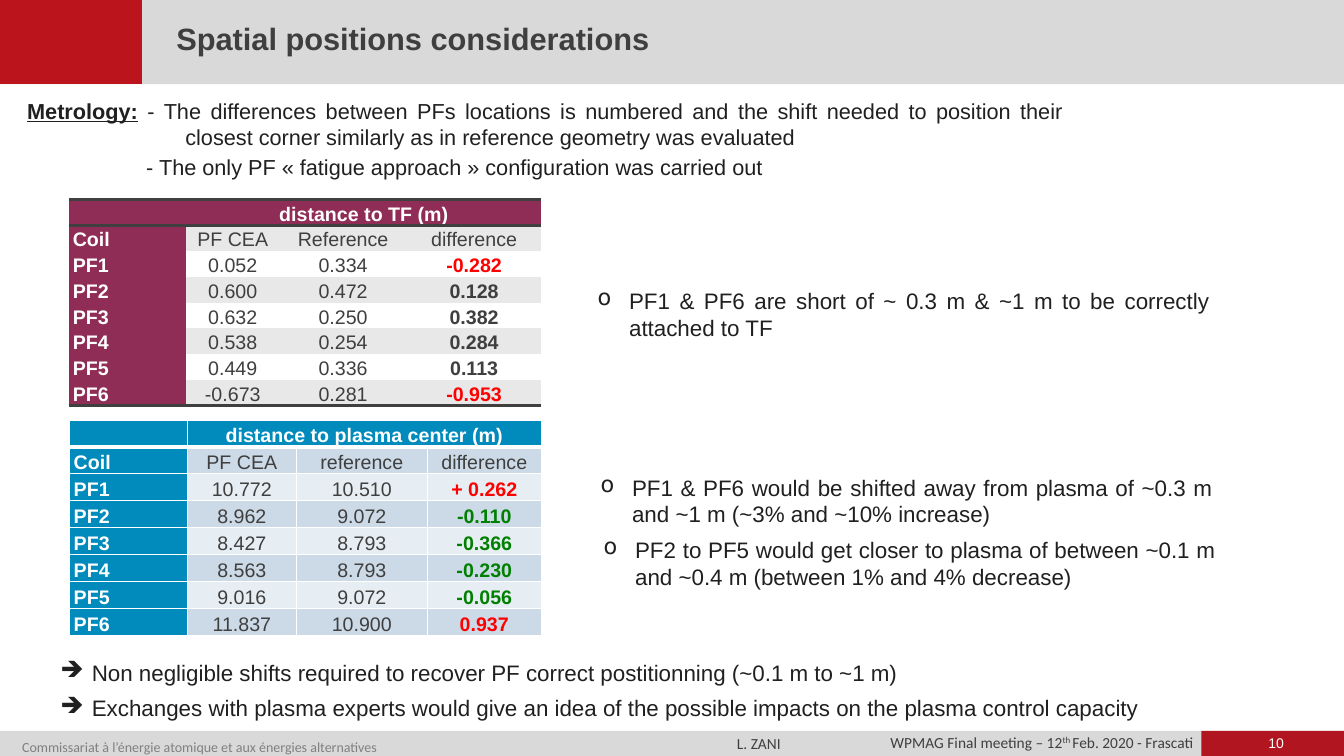
from lxml import etree
from pptx import Presentation
from pptx.dml.color import RGBColor
from pptx.enum import shapes, text
from pptx.oxml.ns import qn
from pptx.util import Pt

GREY, RED, DARK, INK, WHITE = "D9D9D9", "BC141C", "3F3F3F", "202020", "FFFFFF"
LEFT, CENTER, RIGHT, JUSTIFY = (text.PP_ALIGN.LEFT, text.PP_ALIGN.CENTER,
                                text.PP_ALIGN.RIGHT, text.PP_ALIGN.JUSTIFY)
MIDDLE, BOTTOM = text.MSO_ANCHOR.MIDDLE, text.MSO_ANCHOR.BOTTOM


def rgb(code):
    return RGBColor.from_string(code)


def assign(obj, values):
    """Set each attribute of obj named in the dict of values."""
    for name, value in values.items():
        setattr(obj, name, value)


class Builder:
    base = {"name": "Arial", "size": Pt(16), "bold": False, "underline": False}

    def __init__(self, s):
        self.s = s

    def run(self, p, txt, color=INK, baseline=None, **font):
        r = p.add_run()
        r.text = txt
        assign(r.font, {**self.base, **font})
        r.font.color.rgb = rgb(color)
        if baseline:
            r._r.get_or_add_rPr().set("baseline", str(baseline))

    def para(self, p, runs, bullet=None, hang=0, level=0, **fmt):
        """Fill a paragraph with (text, font) runs; hang is a hanging indent in points."""
        assign(p, {"alignment": LEFT, "space_before": Pt(0), "level": level, **fmt})
        pPr = p._p.get_or_add_pPr()
        pPr.set("marL", str(Pt(hang)))
        pPr.set("indent", str(-Pt(hang)))
        if bullet:
            etree.SubElement(pPr, qn("a:buChar"), char=bullet)
        else:
            etree.SubElement(pPr, qn("a:buNone"))
        for txt, font in runs:
            self.run(p, txt, **font)

    def frame(self, tf, paras, inset=(7.2, 3.6), wrap=True, anchor=text.MSO_ANCHOR.TOP):
        """Fill a text frame; paras holds (runs, paragraph format) pairs."""
        x, y = map(Pt, inset)
        assign(tf, {"margin_left": x, "margin_right": x, "margin_top": y, "margin_bottom": y,
                    "word_wrap": wrap, "vertical_anchor": anchor,
                    "auto_size": text.MSO_AUTO_SIZE.NONE})
        for i, (runs, fmt) in enumerate(paras):
            self.para(tf.add_paragraph() if i else tf.paragraphs[0], runs, **fmt)

    def bar(self, box, color):
        sp = self.s.shapes.add_shape(shapes.MSO_SHAPE.RECTANGLE, *map(Pt, box))
        sp.shadow.inherit = False
        sp.fill.solid()
        sp.fill.fore_color.rgb = rgb(color)
        sp.line.fill.background()

    def textbox(self, box, paras, **kw):
        self.frame(self.s.shapes.add_textbox(*map(Pt, box)).text_frame, paras, **kw)

    def footer(self, box, runs, wrap=True, **fmt):
        self.textbox(box, [(runs, fmt)], inset=(5.8, 0), wrap=wrap)

    def placeholder(self, idx, box, paras, **kw):
        """Move a template placeholder in front of the bars and fill it."""
        sp = self.s.placeholders[idx]
        assign(sp, dict(zip(("left", "top", "width", "height"), map(Pt, box))))
        self.s.shapes._spTree.append(sp._element)
        self.frame(sp.text_frame, paras, **kw)

    def bullets(self, box, char, lines):
        fmt = {"bullet": char, "hang": 22.5, "level": 1, "alignment": JUSTIFY}
        self.textbox(box, [([(line, {})], {**fmt, "space_before": Pt(6 if i else 0)})
                           for i, line in enumerate(lines)])

    def cell(self, c, txt, fill, borders, anchor, align, **font):
        """borders holds (colour, width) for left, right, top and bottom; width 0 is no line."""
        assign(c, {"margin_left": Pt(3), "margin_right": Pt(3), "margin_top": 0,
                   "margin_bottom": 0, "vertical_anchor": anchor})
        tcPr = c._tc.get_or_add_tcPr()
        for side, (color, width) in zip("LRTB", borders):
            ln = etree.SubElement(tcPr, qn("a:ln" + side), w=str(Pt(width)))
            if width:
                line = etree.SubElement(ln, qn("a:solidFill"))
                etree.SubElement(line, qn("a:srgbClr"), val=color)
            else:
                etree.SubElement(ln, qn("a:noFill"))
        c.fill.solid()
        c.fill.fore_color.rgb = rgb(fill)
        p = c.text_frame.paragraphs[0]
        self.para(p, [(txt, {"size": Pt(14), **font})] if txt else [],
                  alignment=align, line_spacing=1.15)
        if not txt:
            etree.SubElement(p._p, qn("a:endParaRPr"), sz="1400")

    def table(self, at, cols, heights, rows, head, bands, signs, line, across, upright, anchor):
        """bands: fills of odd and even rows; signs: colours of negative and positive
        differences; across: widths of the horizontal rules; upright: of the vertical ones."""
        frame = self.s.shapes.add_table(len(rows), len(cols), *map(Pt, (*at, sum(cols), sum(heights))))
        t = frame.table
        assign(t, {"first_row": False, "horz_banding": False})
        for part, sizes in ((t.columns, cols), (t.rows, heights)):
            for item, size in zip(part, sizes):
                size = Pt(size)
                if part is t.columns or hasattr(item, "width"):
                    item.width = size
                else:
                    item.height = size
        t.cell(0, 1).merge(t.cell(0, len(cols) - 1))
        for i, row in enumerate(rows):
            for j, txt in enumerate(row):
                color, bold = DARK, False
                if i == 0 or j == 0:
                    color, bold = WHITE, True
                elif i > 1 and j == 3:
                    color, bold = signs[not txt.startswith("-")], True
                self.cell(t.cell(i, j), txt, head if i == 0 or j == 0 else bands[(i + 1) % 2],
                          [(line, w) for w in (upright, upright, across[i], across[i + 1])],
                          anchor, CENTER if j else LEFT, color=color, bold=bold)


def rows_of(title, reference, values):
    coils = [[f"PF{i}", *row] for i, row in enumerate(values, 1)]
    return [["", title, "", ""], ["Coil", "PF CEA", reference, "difference"], *coils]


def main():
    prs = Presentation()
    prs.slide_width, prs.slide_height = Pt(960), Pt(540)
    b = Builder(prs.slides.add_slide(prs.slide_layouts[1]))

    b.bar((0, 522, 960, 18), GREY)
    b.bar((0, 0, 960, 60.2), GREY)
    b.bar((858.2, 522, 101.8, 18), "B1151F")
    b.bar((0, 0, 101.4, 60), RED)

    small = {"name": "Calibri", "size": Pt(11), "color": DARK}
    b.footer((617.8, 524.9, 240.5, 12.2),
             [("WPMAG Final meeting – 12", small), ("th ", {**small, "baseline": 30000}),
              ("Feb. 2020 - Frascati", small)], alignment=RIGHT, line_spacing=0.9)
    b.footer((10, 522.7, 434, 15),
             [("Commissariat à l’énergie atomique et aux énergies alternatives",
               {**small, "size": Pt(10), "color": "808080"})], line_spacing=1.4)
    b.footer((520.6, 524.2, 43.2, 13.7), [("L. ZANI", small)], wrap=False)
    b.footer((878.4, 524.9, 66.2, 12.2), [("10", {"size": Pt(10), "color": WHITE})], alignment=CENTER)

    b.placeholder(0, (116, 15, 461.5, 29.5),
                  [([("Spatial positions considerations",
                      {"size": Pt(22), "color": DARK, "bold": True})], {"line_spacing": 0.8})],
                  inset=(10, 3.6), anchor=MIDDLE)
    body = {"size": Pt(15.5)}
    b.placeholder(1, (9.4, 64.8, 759.6, 69.8), [
        ([("Metrology:", {**body, "bold": True, "underline": True}),
          (" - The differences between PFs locations is numbered and the shift needed to position "
           "their closest corner similarly as in reference geometry was evaluated", body)],
         {"hang": 113, "alignment": JUSTIFY}),
        ([("\t- The only PF « fatigue approach » configuration was carried out", body)],
         {"hang": 85, "alignment": JUSTIFY, "space_before": Pt(3)})], inset=(10, 5))

    b.table((49, 142.6), (84.2, 66.2, 91.4, 95.8), [18.4] * 8,
            rows_of("distance to TF (m)", "Reference", [
                ("0.052", "0.334", "-0.282"), ("0.600", "0.472", "0.128"),
                ("0.632", "0.250", "0.382"), ("0.538", "0.254", "0.284"),
                ("0.449", "0.336", "0.113"), ("-0.673", "0.281", "-0.953")]),
            "8F2D56", ("E8E8E8", WHITE), ("FF0000", DARK),
            DARK, [2, 2, *[0] * 6, 2], 0, MIDDLE)
    b.table((49.7, 300.4), (84.2, 77.8, 93.6, 81.4), [18.7, *[19.3] * 7],
            rows_of("distance to plasma center (m)", "reference", [
                ("10.772", "10.510", "+ 0.262"), ("8.962", "9.072", "-0.110"),
                ("8.427", "8.793", "-0.366"), ("8.563", "8.793", "-0.230"),
                ("9.016", "9.072", "-0.056"), ("11.837", "10.900", "0.937")]),
            "008BBC", ("CCDAE7", "E7EEF3"), ("008000", "FF0000"),
            WHITE, [1, 3, *[1] * 7], 1, BOTTOM)

    for x, y, line in (
            (419.8, 201.6, "PF1 & PF6 are short of ~ 0.3 m & ~1 m to be correctly attached to TF"),
            (421.9, 334.8, "PF1 & PF6 would be shifted away from plasma of ~0.3 m and ~1 m "
                           "(~3% and ~10% increase)"),
            (424.1, 379.4, "PF2 to PF5 would get closer to plasma of between ~0.1 m and ~0.4 m "
                           "(between 1% and 4% decrease)")):
        b.bullets((x, y, 451.4, 46), "o", [line])
    b.bullets((36, 467.3, 869.8, 51.8), "➔", [
        "Non negligible shifts required to recover PF correct postitionning (~0.1 m to ~1 m)",
        "Exchanges with plasma experts would give an idea of the possible impacts on the plasma "
        "control capacity"])
    prs.save("out.pptx")


if __name__ == "__main__":
    main()
